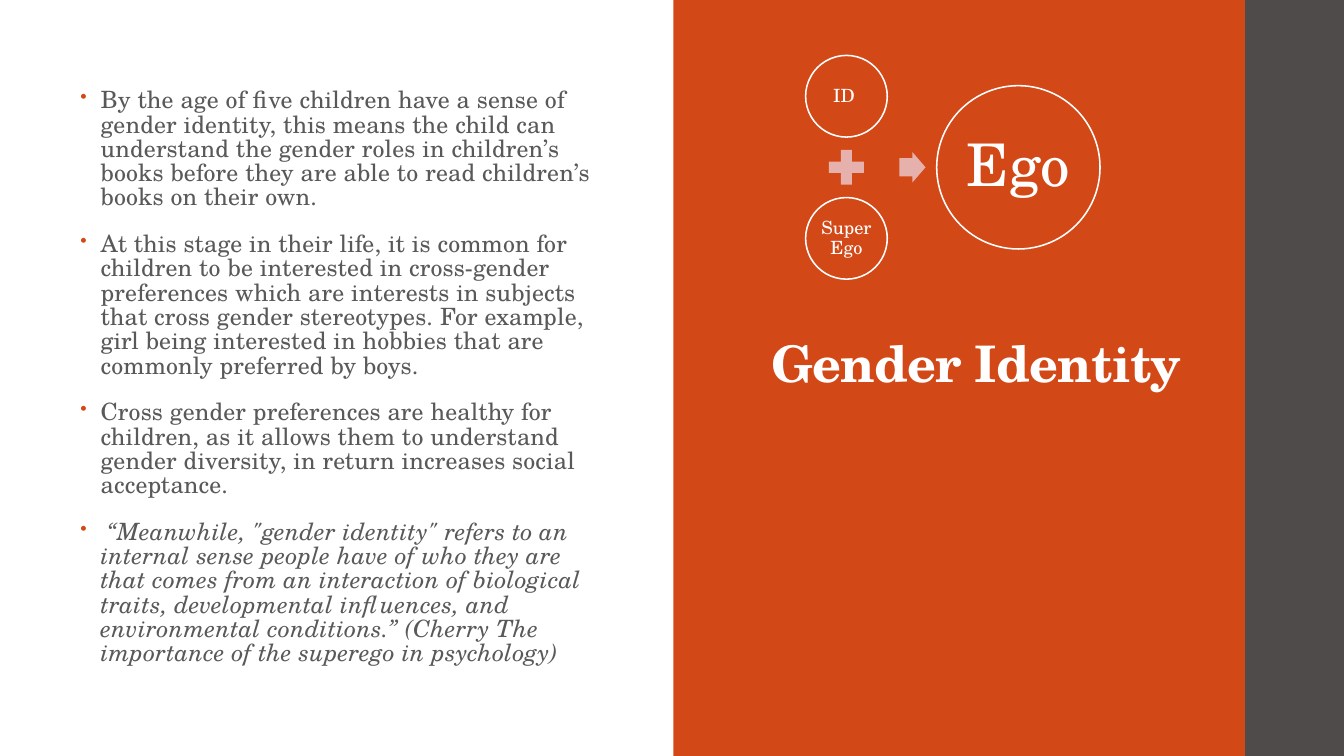
from lxml import etree
from pptx import Presentation
from pptx.dml.color import RGBColor
from pptx.enum.shapes import MSO_SHAPE
from pptx.enum.text import MSO_ANCHOR, PP_ALIGN
from pptx.oxml.ns import qn
from pptx.util import Inches, Pt

RECTANGLE, CIRCLE = MSO_SHAPE.RECTANGLE, MSO_SHAPE.OVAL
PLUS, ARROW = MSO_SHAPE.MATH_PLUS, MSO_SHAPE.RIGHT_ARROW
MIDDLE, CENTER = MSO_ANCHOR.MIDDLE, PP_ALIGN.CENTER

# The slide is a grid of 133.3 columns by 75 rows, a tenth of an inch each.
COLUMNS, ROWS = 133.3, 75
FONT = "TeX Gyre Schola"
COLORS = {
    "panel": "D34817",
    "band": "4F4B4B",
    "body": "595959",
    "white": "FFFFFF",
    "operator": "E6B1AC",
}
PANEL_LEFT, BAND_LEFT = 66.8, 123.5

STATEMENTS = [
    "By the age of five children have a sense of gender identity, this means "
    "the child can understand the gender roles in children’s books before "
    "they are able to read children’s books on their own.",
    "At this stage in their life, it is common for children to be interested "
    "in cross-gender preferences which are interests in subjects that cross "
    "gender stereotypes. For example, girl being interested in hobbies that "
    "are commonly preferred by boys.",
    "Cross gender preferences are healthy for children, as it allows them to "
    "understand gender diversity, in return increases social acceptance.",
]
QUOTE = (
    " “Meanwhile, \"gender identity\" refers to an internal sense people have "
    "of who they are that comes from an interaction of biological traits, "
    "developmental influences, and environmental conditions.” (Cherry The "
    "importance of the superego in psychology)"
)


def grid(units):
    return Inches(units / 10)


def color(name):
    return RGBColor.from_string(COLORS[name])


def set_margins(frame, left, top, right, bottom):
    frame.margin_left, frame.margin_top = grid(left), grid(top)
    frame.margin_right, frame.margin_bottom = grid(right), grid(bottom)


def add_run(paragraph, text, size, color_name, bold=False, italic=False, spacing=0):
    """Add a run; spacing is the letter spacing in points."""
    run = paragraph.add_run()
    run.text = text
    font = run.font
    font.name, font.size = FONT, Pt(size)
    font.bold, font.italic = bold, italic
    font.color.rgb = color(color_name)
    if spacing:
        run._r.get_or_add_rPr().set("spc", str(round(spacing * 100)))


def add_bullet(paragraph):
    properties = paragraph._p.get_or_add_pPr()
    properties.set("marL", str(grid(2)))
    properties.set("indent", str(-grid(2)))
    bullet_color = etree.SubElement(properties, qn("a:buClr"))
    etree.SubElement(bullet_color, qn("a:srgbClr"), val=COLORS["panel"])
    etree.SubElement(properties, qn("a:buSzPct"), val="80000")
    etree.SubElement(properties, qn("a:buChar"), char="•")


def add_figure(slide, kind, left, top, width, height, fill, outline=None):
    figure = slide.shapes.add_shape(
        kind, grid(left), grid(top), grid(width), grid(height))
    figure.shadow.inherit = False
    figure.fill.solid()
    figure.fill.fore_color.rgb = color(fill)
    if outline:
        figure.line.color.rgb = color(outline)
        figure.line.width = Pt(1.1)
    else:
        figure.line.fill.background()
    return figure


def add_centered(slide, kind, x, y, width, height, fill, outline=None):
    """Add a figure whose centre is at column x and row y."""
    return add_figure(slide, kind, x - width / 2, y - height / 2,
                      width, height, fill, outline)


def add_concept(slide, label, x, y, diameter, size, margin):
    circle = add_centered(slide, CIRCLE, x, y, diameter, diameter, "panel", "white")
    frame = circle.text_frame
    frame.word_wrap = True
    frame.vertical_anchor = MIDDLE
    set_margins(frame, margin, margin, margin, margin)
    paragraph = frame.paragraphs[0]
    paragraph.alignment = CENTER
    paragraph.line_spacing = 0.9
    add_run(paragraph, label, size, "white")


def add_text_area(slide, left, top, width, height):
    area = slide.shapes.add_textbox(grid(left), grid(top), grid(width), grid(height))
    frame = area.text_frame
    frame.word_wrap = True
    frame.vertical_anchor = MIDDLE
    return frame


def add_title(slide):
    frame = add_text_area(slide, 75.5, 7, 43.3, 58.8)
    set_margins(frame, 1, 0.3, 1, 0.5)
    paragraph = frame.paragraphs[0]
    paragraph.line_spacing = 0.9
    add_run(paragraph, "Gender Identity", 36, "white", bold=True, spacing=-0.5)


def add_statements(slide):
    frame = add_text_area(slide, 7, 7, 52.7, 61)
    for index, statement in enumerate(STATEMENTS + [QUOTE]):
        paragraph = frame.add_paragraph() if index else frame.paragraphs[0]
        add_bullet(paragraph)
        paragraph.line_spacing = 0.85
        paragraph.space_before = Pt(14 if index else 0)
        paragraph.space_after = Pt(2)
        add_run(paragraph, statement, 17, "body",
                italic=statement == QUOTE, spacing=0.1)


def add_ego_diagram(slide):
    """Draw ID plus Super Ego leading to Ego, all about one middle row."""
    sources, middle, offset = 83.95, 16.6, 7.05
    add_concept(slide, "ID ", sources, middle - offset, 8.1, 13, 0.2)
    add_centered(slide, PLUS, sources, middle, 4.7, 4.7, "operator")
    add_concept(slide, "Super Ego", sources, middle + offset, 8.1, 13, 0.2)
    arrow = add_centered(slide, ARROW, 90.5, middle, 2.6, 3, "operator")
    arrow.adjustments[0], arrow.adjustments[1] = 0.6, 0.5
    add_concept(slide, "Ego", 101, middle, 16.2, 42, 0.6)


def main():
    presentation = Presentation()
    presentation.slide_width = grid(COLUMNS)
    presentation.slide_height = grid(ROWS)
    slide = presentation.slides.add_slide(presentation.slide_layouts[6])
    add_figure(slide, RECTANGLE, PANEL_LEFT, 0, BAND_LEFT - PANEL_LEFT, ROWS, "panel")
    add_figure(slide, RECTANGLE, BAND_LEFT, 0, COLUMNS - BAND_LEFT, ROWS, "band")
    add_title(slide)
    add_statements(slide)
    add_ego_diagram(slide)
    presentation.save("out.pptx")


if __name__ == "__main__":
    main()
